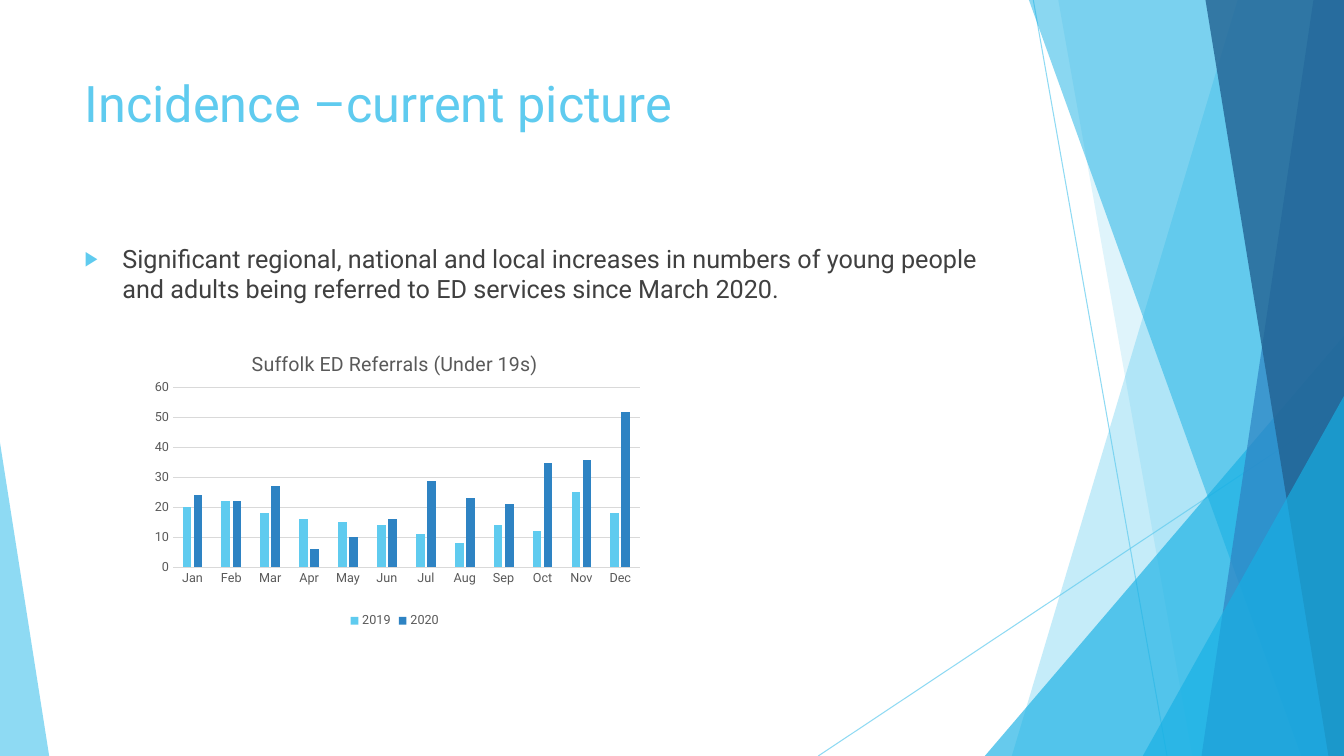
from lxml.etree import SubElement
from pptx import Presentation
from pptx.chart.data import CategoryChartData
from pptx.dml.color import RGBColor
from pptx.enum.chart import XL_CHART_TYPE, XL_LEGEND_POSITION, XL_TICK_MARK
from pptx.enum.shapes import MSO_CONNECTOR, MSO_SHAPE
from pptx.enum.text import MSO_ANCHOR, MSO_AUTO_SIZE, PP_ALIGN
from pptx.oxml import parse_xml
from pptx.oxml.ns import nsdecls, qn
from pptx.util import Cm, Pt

FONT = "Roboto"
COLOURS = {
    "sky": "5FCBEF",
    "cyan": "17B0E4",
    "blue": "2E83C3",
    "navy": "226292",
    "text": "404040",
    "label": "595959",
    "grid": "D9D9D9",
}
WIDTH, HEIGHT = 33.87, 19.05


def colour(name):
    return RGBColor.from_string(COLOURS[name])


class Slide:
    """Holds the style and the current page."""

    def __init__(self, deck):
        self.page = deck.slides.add_slide(deck.slide_layouts[1])

    def set_alpha(self, shape, percent):
        for tint in shape.element.spPr.iter(qn("a:srgbClr")):
            SubElement(tint, qn("a:alpha"), val=str(percent * 1000))

    def paint(self, shape, name, percent):
        shape.shadow.inherit = False
        shape.fill.solid()
        shape.fill.fore_color.rgb = colour(name)
        shape.line.fill.background()
        self.set_alpha(shape, percent)

    def ray(self, start, end):
        points = [Cm(value) for value in (*start, *end)]
        line = self.page.shapes.add_connector(MSO_CONNECTOR.STRAIGHT, *points)
        line.line.color.rgb = colour("sky")
        line.line.width = Pt(0.75)
        self.set_alpha(line, 70)
        SubElement(line.element.spPr, qn("a:effectLst"))

    def facet(self, top, bottom, name, percent):
        """A full-height facet between a slanted left edge and the right edge of the page."""
        builder = self.page.shapes.build_freeform(Cm(top), 0)
        corners = [(WIDTH, 0), (WIDTH, HEIGHT), (bottom, HEIGHT)]
        builder.add_line_segments([(Cm(x), Cm(y)) for x, y in corners])
        self.paint(builder.convert_to_shape(), name, percent)

    def corner(self, left, top, width, apex, name, percent):
        """A triangle standing on the bottom edge of the page."""
        shape = self.page.shapes.add_shape(
            MSO_SHAPE.ISOSCELES_TRIANGLE, Cm(left), Cm(top), Cm(width), Cm(HEIGHT - top))
        shape.adjustments[0] = apex
        self.paint(shape, name, percent)

    def text(self, index, top, height, words, size, name):
        box = self.page.placeholders[index]
        box.left, box.top, box.width, box.height = Cm(1.88), Cm(top), Cm(23.88), Cm(height)
        self.page.shapes.element.append(box.element)  # in front of the facets
        frame = box.text_frame
        frame.text = words
        frame.word_wrap = True
        frame.auto_size = MSO_AUTO_SIZE.NONE
        frame.vertical_anchor = MSO_ANCHOR.TOP
        para = frame.paragraphs[0]
        para.alignment = PP_ALIGN.LEFT
        self.style(para.font, size, name)
        return para

    def style(self, font, size, name):
        font.name, font.size, font.bold = FONT, Pt(size), False
        font.color.rgb = colour(name)

    def bullet(self, para):
        para.space_before = Pt(10)
        properties = para._p.get_or_add_pPr()
        properties.set("marL", str(Cm(0.95)))
        properties.set("indent", str(-Cm(0.95)))
        tint = SubElement(properties, qn("a:buClr"))
        SubElement(tint, qn("a:srgbClr"), val=COLOURS["sky"])
        SubElement(properties, qn("a:buSzPct"), val="80000")
        SubElement(properties, qn("a:buChar"), char="▶")

    def column_chart(self, area, title, categories, series, plot_area):
        data = CategoryChartData()
        data.categories = categories
        for name, values, _ in series:
            data.add_series(name, values)
        chart = self.page.shapes.add_chart(
            XL_CHART_TYPE.COLUMN_CLUSTERED, *[Cm(value) for value in area], data).chart
        self.style(chart.font, 10, "label")

        # Title and legend
        chart.has_title = True
        chart.chart_title.include_in_layout = False
        chart.chart_title.text_frame.text = title
        self.style(chart.chart_title.text_frame.paragraphs[0].font, 14, "label")
        chart.has_legend = True
        chart.legend.position = XL_LEGEND_POSITION.BOTTOM
        chart.legend.include_in_layout = False
        self.style(chart.legend.font, 9, "label")

        # Axes
        for axis in (chart.category_axis, chart.value_axis):
            axis.major_tick_mark = axis.minor_tick_mark = XL_TICK_MARK.NONE
            self.style(axis.tick_labels.font, 9, "label")
        chart.value_axis.minimum_scale, chart.value_axis.maximum_scale = 0, 60
        chart.value_axis.major_unit = 10
        chart.value_axis.format.line.fill.background()
        for lines in (chart.category_axis, chart.value_axis.major_gridlines):
            lines.format.line.color.rgb = colour("grid")
            lines.format.line.width = Pt(0.75)

        # Columns
        plot = chart.plots[0]
        plot.gap_width, plot.overlap, plot.vary_by_categories = 219, -27, False
        for columns, (_, _, name) in zip(plot.series, series):
            columns.format.fill.solid()
            columns.format.fill.fore_color.rgb = colour(name)

        # Inner plot area, as fractions of the chart
        parent = chart.element.find(".//" + qn("c:plotArea"))
        for old in parent.findall(qn("c:layout")):
            parent.remove(old)
        sizes = "".join(f'<c:{key} val="{value}"/>' for key, value in zip("xywh", plot_area))
        parent.insert(0, parse_xml(
            f'<c:layout {nsdecls("c")}><c:manualLayout><c:layoutTarget val="inner"/>'
            f'<c:xMode val="edge"/><c:yMode val="edge"/>{sizes}</c:manualLayout></c:layout>'))


def main():
    deck = Presentation()
    deck.slide_width, deck.slide_height = Cm(WIDTH), Cm(HEIGHT)
    slide = Slide(deck)

    # Decoration, from back to front
    slide.ray((26.04, 0), (29.41, HEIGHT))
    slide.ray((WIDTH, 10.24), (20.62, HEIGHT))
    slide.facet(31.19, 25.5, "sky", 36)
    slide.facet(26.67, 30.05, "sky", 20)
    slide.corner(24.82, 8.46, WIDTH - 24.82, 1, "cyan", 66)
    slide.facet(25.93, 32.79, "cyan", 50)
    slide.facet(33.1, 30.28, "blue", 70)
    slide.facet(30.38, 33.48, "navy", 80)
    slide.corner(28.8, 9.98, WIDTH - 28.8, 1, "cyan", 66)
    slide.corner(0, 11.15, 1.24, 0, "sky", 70)

    # Title and list
    slide.text(0, 1.7, 3.66, "Incidence –current picture", 36, "sky")
    slide.bullet(slide.text(
        1, 6, 10.77,
        "Significant regional, national and local increases in numbers of young people "
        "and adults being referred to ED services since March 2020.", 18, "text"))

    # Referrals by month
    months = ["Jan", "Feb", "Mar", "Apr", "May", "Jun", "Jul", "Aug", "Sep", "Oct", "Nov", "Dec"]
    referrals = [
        ("2019", [20, 22, 18, 16, 15, 14, 11, 8, 14, 12, 25, 18], "sky"),
        ("2020", [24, 22, 27, 6, 10, 16, 29, 23, 21, 35, 36, 52], "blue"),
    ]
    slide.column_chart((3.45, 8.46, 13, 7.47), "Suffolk ED Referrals (Under 19s)",
                       months, referrals, (0.07, 0.175, 0.905, 0.607))
    deck.save("out.pptx")


if __name__ == "__main__":
    main()
